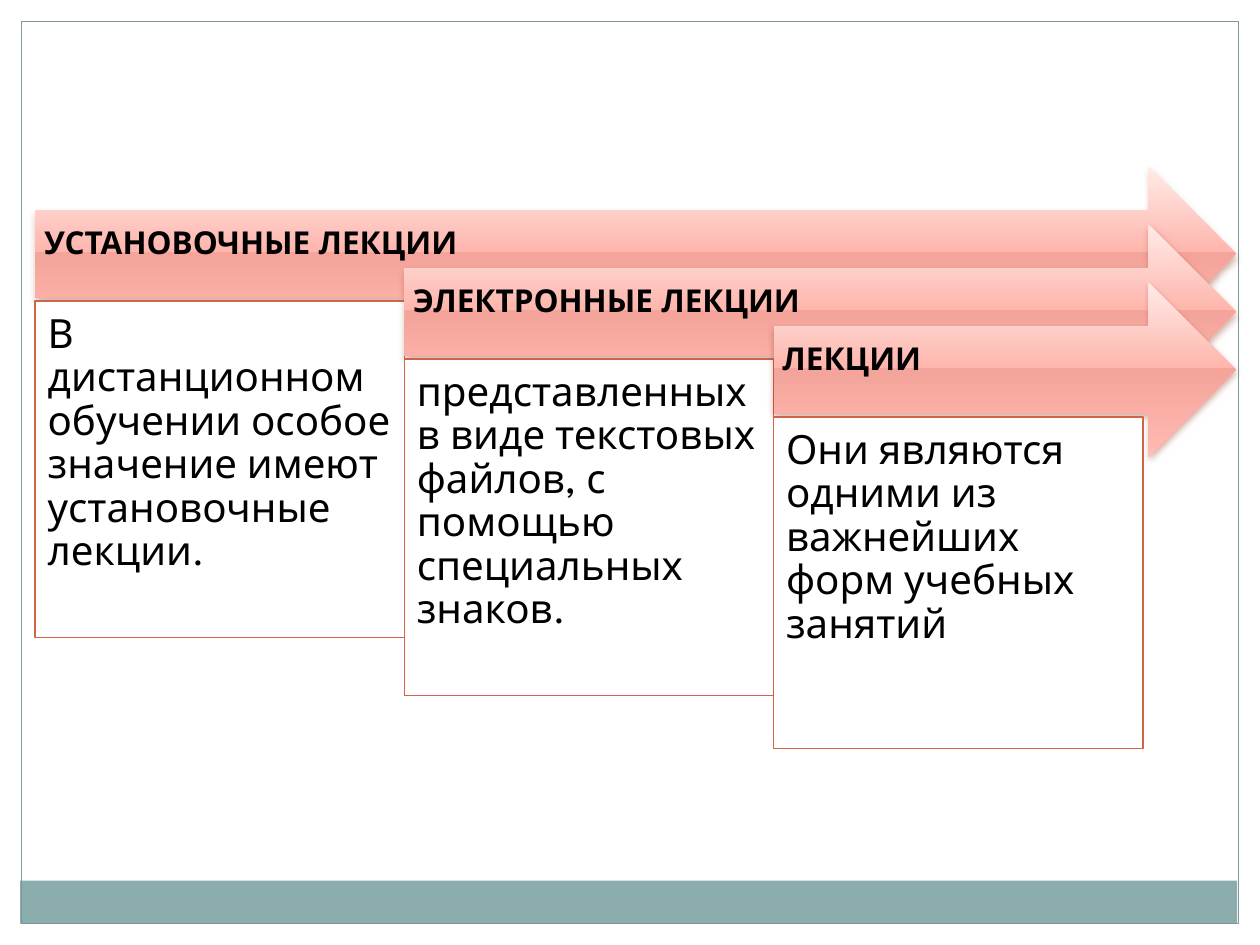
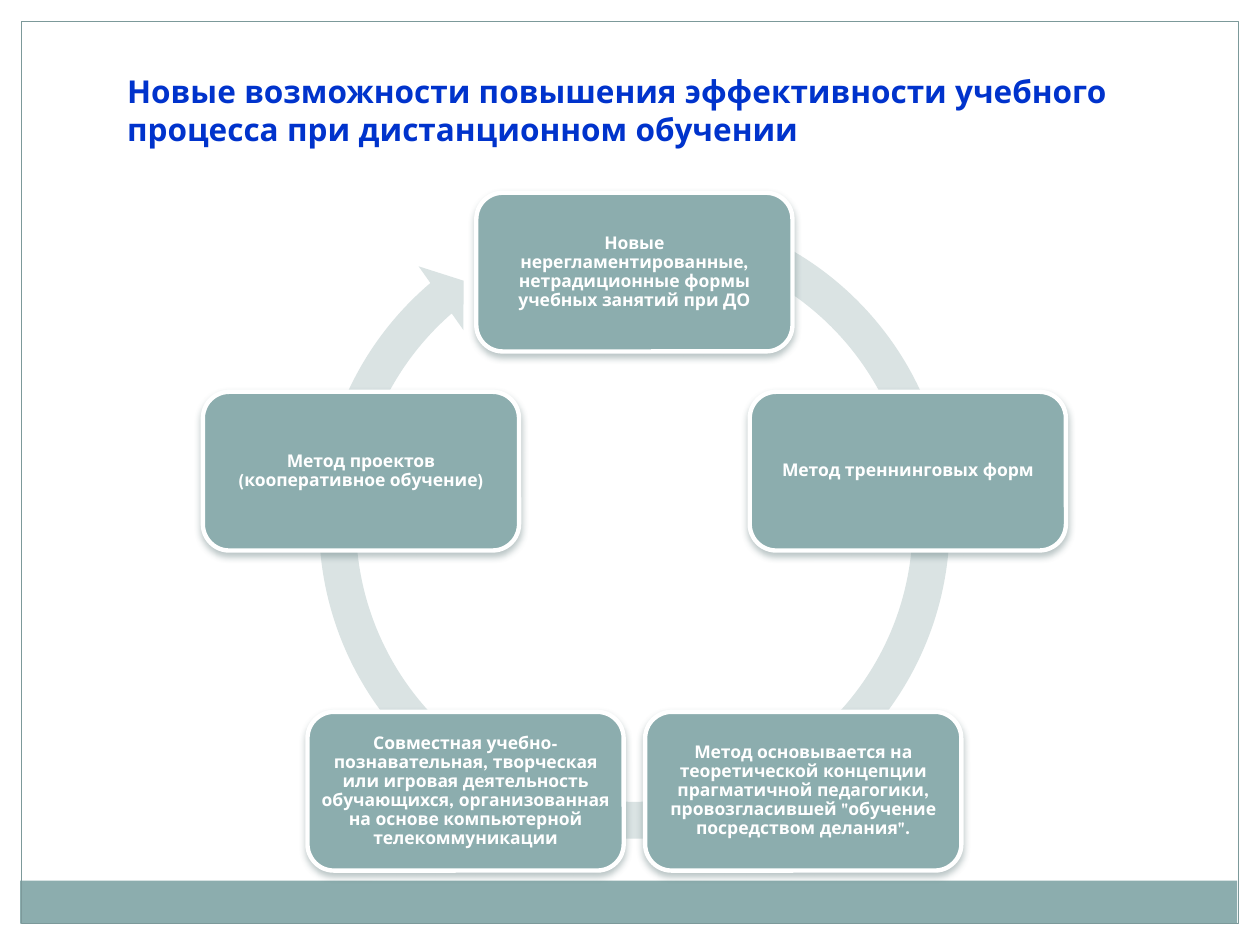
import math
import pptx
import pptx.util
import pptx.dml.color
import pptx.enum.shapes
import pptx.enum.text
import pptx.oxml
import pptx.oxml.ns

PX = 9144
FONT = "League Spartan"
SAGE, EDGE, RING, WHITE = "8CADAE", "7C999A", "DAE3E3", "FFFFFF"
BLACK, BLUE, RUST = "000000", "0033CC", "D16349"
BLUSH = [(0, "FFEBE8"), (49, "FEB6AD"), (49, "F4A49A"), (92, "FEB6AD"), (100, "FCC3BC")]
SHAPE = pptx.enum.shapes.MSO_SHAPE
ALIGN = pptx.enum.text.PP_ALIGN
ANCHOR = pptx.enum.text.MSO_ANCHOR

STEPS = [
    ("УСТАНОВОЧНЫЕ ЛЕКЦИИ", 267,
     "В дистанционном обучении особое значение имеют установочные лекции."),
    ("ЭЛЕКТРОННЫЕ ЛЕКЦИИ", 267,
     "представленных в виде текстовых файлов, с помощью специальных знаков."),
    ("ЛЕКЦИИ", 263, "Они являются одними из важнейших форм учебных занятий"),
]
TITLE = "Новые возможности повышения эффективности учебного процесса при дистанционном обучении"
FORMS = [
    "Новые нерегламентированные, нетрадиционные формы учебных занятий при ДО",
    "Метод треннинговых форм",
    "Метод основывается на теоретической концепции прагматичной педагогики, "
    "провозгласившей \"обучение посредством делания\".",
    "Совместная учебно-познавательная, творческая или игровая деятельность обучающихся, "
    "организованная на основе компьютерной телекоммуникации",
    "Метод проектов (кооперативное обучение)",
]


def emu(box):
    return [round(v * PX) for v in box]


def color(code):
    return pptx.dml.color.RGBColor.from_string(code)


def node(tag, **attrs):
    item = pptx.oxml.parse_xml(f"<a:{tag} {pptx.oxml.ns.nsdecls('a')}/>")
    for key, value in attrs.items():
        item.set(key, str(value))
    return item


def tint(tag, code, **attrs):
    item = node(tag, **attrs)
    item.append(node("srgbClr", val=code))
    return item


def draw(slide, kind, box, fill=None, line=None, width=1):
    shape = slide.shapes.add_shape(kind, *emu(box))
    shape.shadow.inherit = False
    if fill:
        shape.fill.solid()
        shape.fill.fore_color.rgb = color(fill)
    else:
        shape.fill.background()
    if line:
        shape.line.color.rgb = color(line)
        shape.line.width = pptx.util.Pt(width)
    else:
        shape.line.fill.background()
    return shape


def blend(shape, stops):
    shape.fill.gradient()
    shape.fill.gradient_angle = 270
    stack = shape._element.spPr.find(".//" + pptx.oxml.ns.qn("a:gsLst"))
    for old in list(stack):
        stack.remove(old)
    for pos, code in stops:
        stack.append(tint("gs", code, pos=pos * 1000))


def shade(shape, code):
    cast = tint("outerShdw", code, blurRad=50800, dist=25400, dir=5400000, rotWithShape=0)
    cast[0].append(node("alpha", val=38000))
    shape._element.spPr.find(pptx.oxml.ns.qn("a:effectLst")).append(cast)


def write(shape, text, size=18, ink=BLACK, bold=False, align=ALIGN.LEFT,
          anchor=ANCHOR.TOP, pads=(10, 10, 10, 10), space=0.9):
    frame = shape.text_frame
    frame.word_wrap = True
    frame.vertical_anchor = anchor
    (frame.margin_left, frame.margin_top,
     frame.margin_right, frame.margin_bottom) = emu(pads)
    para = frame.paragraphs[0]
    para.alignment = align
    para.line_spacing = space
    run = para.add_run()
    run.text = text
    run.font.name = FONT
    run.font.size = pptx.util.Pt(size)
    run.font.bold = bold
    run.font.color.rgb = color(ink)
    return frame


def start(deck):
    slide = deck.slides.add_slide(deck.slide_layouts[6])
    draw(slide, SHAPE.RECTANGLE, (16, 699, 966, 34), SAGE)
    draw(slide, SHAPE.RECTANGLE, (17, 17, 966, 716), line=EDGE, width=0.75)
    return slide


def step(slide, box, head, body, depth):
    left, top, width, height = box
    arrow = draw(slide, SHAPE.RIGHT_ARROW, box)
    blend(arrow, BLUSH)
    shade(arrow, "902E17")
    write(arrow, head, bold=True, anchor=ANCHOR.MIDDLE, pads=(7, 7, 28, 22))
    card = draw(slide, SHAPE.RECTANGLE, (left, top + 107, 293, depth), WHITE, RUST, 0.9)
    write(card, body, size=23)


def stairs(slide, box):
    left, top, width, height = box
    for i, (head, depth, body) in enumerate(STEPS):
        shift = 293 * i
        step(slide, (left + shift, top + 46 * i, width - shift, height), head, body, depth)


def heading(slide, box):
    title = slide.shapes.add_textbox(*emu(box))
    frame = write(title, TITLE, ink=BLUE, bold=True, pads=(10, 5, 10, 5), space=1.0)
    frame.auto_size = pptx.enum.text.MSO_AUTO_SIZE.SHAPE_TO_FIT_TEXT


def cycle(slide, box, reach=228, wide=251, high=126):
    left, top, width, height = box
    ring = draw(slide, SHAPE.CIRCULAR_ARROW, box, RING)
    for i, value in enumerate((0.055, 3.307, 137.619, 173.945, 0.058)):
        ring.adjustments[i] = value
    mid, level = left + width / 2, top + 295
    for i, text in enumerate(FORMS):
        turn = math.tau * i / len(FORMS)
        x = round(mid + reach * math.sin(turn) - wide / 2)
        y = round(level - reach * math.cos(turn) - high / 2)
        card = draw(slide, SHAPE.ROUNDED_RECTANGLE, (x, y, wide, high), SAGE, WHITE, 2.5)
        shade(card, "4E6B6C")
        write(card, text, size=10, ink=WHITE, bold=True, align=ALIGN.CENTER,
              anchor=ANCHOR.MIDDLE, pads=(4, 4, 4, 4))


def main():
    deck = pptx.Presentation()
    deck.slide_width, deck.slide_height = emu((1000, 750))
    stairs(start(deck), (28, 132, 953, 139))
    slide = start(deck)
    heading(slide, (91, 52, 882, 71))
    cycle(slide, (237, 149, 533, 533))
    deck.save("out.pptx")


if __name__ == "__main__":
    main()
